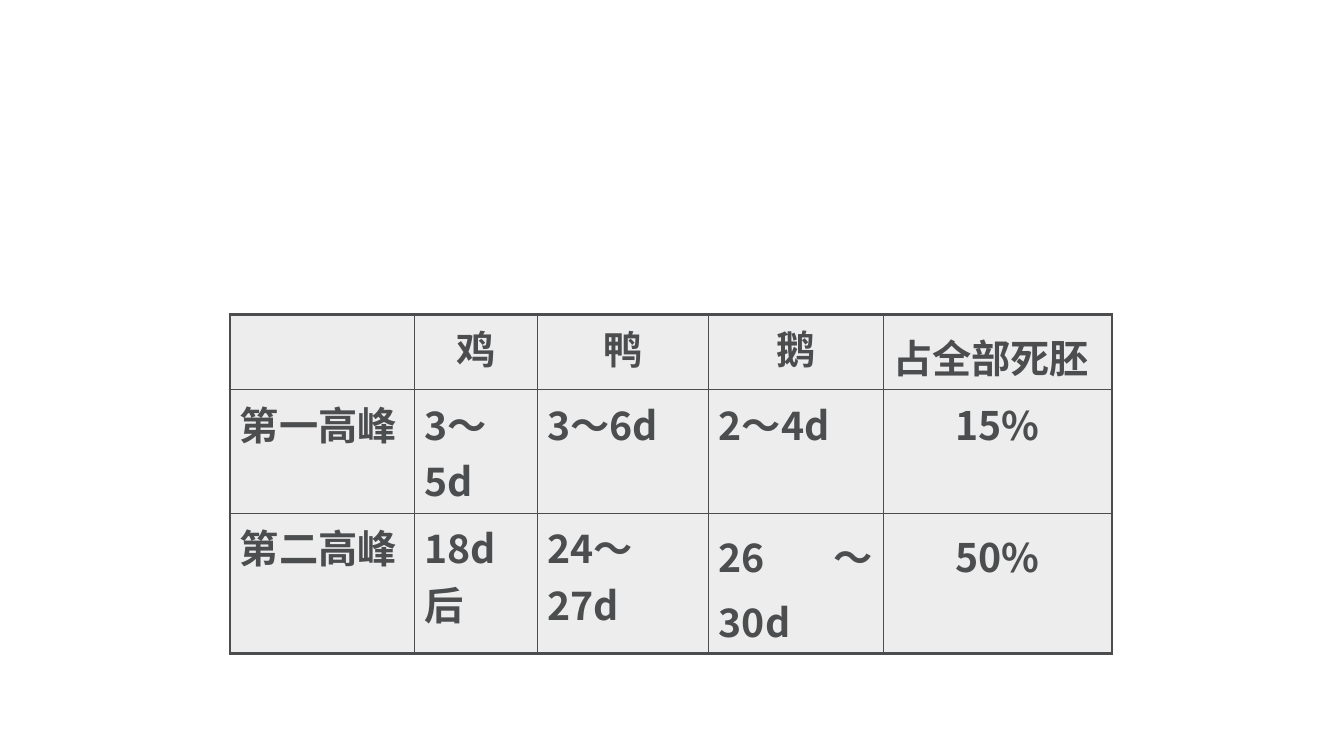
from pptx import Presentation
from pptx.dml.color import RGBColor
from pptx.enum.text import PP_ALIGN as Align
from pptx.oxml import parse_xml
from pptx.oxml.ns import nsdecls, qn
from pptx.util import Inches, Pt
from lxml.etree import SubElement

INK = RGBColor(0x4B, 0x4D, 0x4F)
CELL_GREY = RGBColor(0xDD, 0xDD, 0xDD)
FONT = "Noto Sans CJK SC"
FONT_FORMAT = {"name": FONT, "size": Pt(28), "bold": True}
INNER, OUTER = Pt(1), Pt(2.25)

COLUMN_WIDTHS = [1.83, 1.22, 1.7, 1.73, 2.27]
ROW_HEIGHTS = [0.5, 0.62, 0.63]
PEAKS = [
    ["", "鸡", "鸭", "鹅", "占全部死胚"],
    ["第一高峰", "3～5d", "3～6d", "2～4d", "15%"],
    ["第二高峰", "18d后", "24～27d", "26～30d", "50%"],
]
LOOSE_CELLS = {(0, 4), (2, 3), (2, 4)}  # cells with 1.15 line spacing


def cell_alignment(row, col):
    if (row, col) in {(0, 4), (2, 3)}:
        return Align.JUSTIFY
    return Align.CENTER if row == 0 or col == 4 else Align.LEFT


def write_cell(cell, text, alignment, loose):
    paragraph = cell.text_frame.paragraphs[0]
    paragraph.alignment = alignment
    if loose:
        paragraph.line_spacing = 1.15
    run = paragraph.add_run()
    run.text = text
    for attribute, value in FONT_FORMAT.items():
        setattr(run.font, attribute, value)
    run.font.color.rgb = INK
    SubElement(run.font._element, qn("a:ea"), typeface=FONT)


def shade_cell(cell):
    cell.fill.solid()
    cell.fill.fore_color.rgb = CELL_GREY
    colour = cell._tc.tcPr.find(".//" + qn("a:srgbClr"))
    SubElement(colour, qn("a:alpha"), val="50000")


def border_cell(cell, widths):
    # Border lines must come before the fill in the cell properties
    for position, (side, width) in enumerate(widths.items()):
        line = parse_xml(
            f'<a:ln{side} {nsdecls("a")} w="{int(width)}">'
            f'<a:solidFill><a:srgbClr val="{INK}"/></a:solidFill>'
            f'<a:prstDash val="solid"/></a:ln{side}>')
        cell._tc.tcPr.insert(position, line)


def add_peak_table(slide):
    last_row, last_col = len(ROW_HEIGHTS) - 1, len(COLUMN_WIDTHS) - 1
    table = slide.shapes.add_table(
        last_row + 1, last_col + 1, Inches(2.28), Inches(3.12),
        Inches(sum(COLUMN_WIDTHS)), Inches(sum(ROW_HEIGHTS))).table
    table.first_row = table.horz_banding = False
    for column, width in zip(table.columns, COLUMN_WIDTHS):
        column.width = Inches(width)
    for row, height in zip(table.rows, ROW_HEIGHTS):
        row.height = Inches(height)

    for r, texts in enumerate(PEAKS):
        for c, text in enumerate(texts):
            cell = table.cell(r, c)
            if text:
                write_cell(cell, text, cell_alignment(r, c), (r, c) in LOOSE_CELLS)
            shade_cell(cell)
            border_cell(cell, {
                "L": OUTER if c == 0 else INNER,
                "R": OUTER if c == last_col else INNER,
                "T": OUTER if r == 0 else INNER,
                "B": OUTER if r == last_row else INNER,
            })


def main():
    deck = Presentation()
    deck.slide_width, deck.slide_height = Inches(13.33), Inches(7.5)
    slide = deck.slides.add_slide(deck.slide_layouts[6])
    # Peaks of embryo death by species
    add_peak_table(slide)
    deck.save("out.pptx")


if __name__ == "__main__":
    main()
